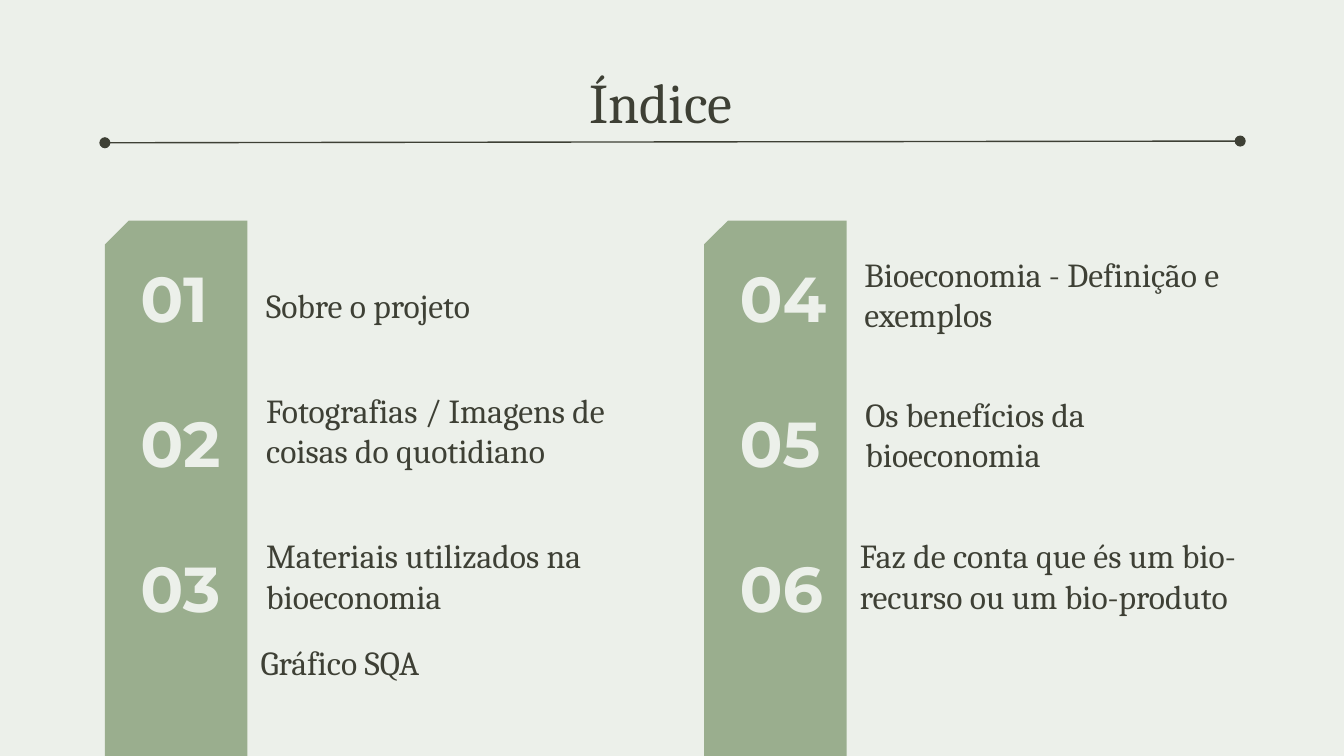
from lxml import etree
from pptx import Presentation
from pptx.dml.color import RGBColor
from pptx.enum.shapes import MSO_CONNECTOR, MSO_SHAPE
from pptx.enum.text import MSO_ANCHOR, PP_ALIGN
from pptx.oxml.ns import qn
from pptx.util import Pt

TOP, BOTTOM = MSO_ANCHOR.TOP, MSO_ANCHOR.BOTTOM
LEFT, CENTER = PP_ALIGN.LEFT, PP_ALIGN.CENTER

THEME = {
    "background": RGBColor.from_string("ECF0EA"),
    "ink": RGBColor.from_string("3E4035"),
    "bar": RGBColor.from_string("9AAE8E"),
    "title": {"name": "Cambria", "size": Pt(30), "bold": False},
    "entry": {"name": "Cambria", "size": Pt(18), "bold": False},
    "number": {"name": "Montserrat", "size": Pt(34), "bold": True},
}

# Content: each entry is (text, shift right, shift down, width) from its grid place.
TITLE = "Índice"
COLUMNS = [
    [
        ("Sobre o projeto", 0, 0, 216.7),
        ("Fotografias / Imagens de coisas do quotidiano", 0, 0, 216.7),
        ("Materiais utilizados na bioeconomia", 0, 0, 216.7),
    ],
    [
        ("Bioeconomia - Definição e exemplos", -0.5, 5, 216.7),
        ("Os benefícios da bioeconomia", 0, 2.2, 216.7),
        ("Faz de conta que és um bio-recurso ou um bio-produto", -2.9, 0, 252),
    ],
]
EXTRA_ENTRY = "Gráfico SQA"

# Layout in points
SLIDE_WIDTH, SLIDE_HEIGHT = 720, 405
BAR_LEFT, BAR_TOP, BAR_WIDTH, COLUMN_STEP = 56.2, 118.2, 76.4, 321
NUMBER_OFFSET, NUMBER_TOP, NUMBER_WIDTH, NUMBER_HEIGHT = 12, 134.8, 64.8, 51.8
ENTRY_OFFSET, ENTRY_TOP, ENTRY_HEIGHT = 79.3, 135.2, 46.1
ROW_STEP = 77.9
INSET = 7.2


def add_text(slide, text, box, style, color, anchor=BOTTOM, align=LEFT):
    frame = slide.shapes.add_textbox(*map(Pt, box)).text_frame
    settings = {"word_wrap": True, "vertical_anchor": anchor}
    for side in ("left", "top", "right", "bottom"):
        settings[f"margin_{side}"] = Pt(INSET)
    for key, value in settings.items():
        setattr(frame, key, value)
    paragraph = frame.paragraphs[0]
    paragraph.alignment = align
    run = paragraph.add_run()
    run.text = text
    for key, value in THEME[style].items():
        setattr(run.font, key, value)
    run.font.color.rgb = THEME[color]


def add_bar(slide, left):
    """Add a bar with its top left corner cut off, reaching the slide's foot."""
    box = (left, BAR_TOP, BAR_WIDTH, SLIDE_HEIGHT - BAR_TOP)
    bar = slide.shapes.add_shape(MSO_SHAPE.SNIP_1_RECTANGLE, *map(Pt, box))
    bar.adjustments[0] = 0.167
    bar.shadow.inherit = False
    bar.fill.solid()
    bar.fill.fore_color.rgb = THEME["bar"]
    bar.line.fill.background()
    bar._element.spPr.get_or_add_xfrm().set("flipH", "1")


def add_title_rule(slide):
    """Add the line under the title, with a dot at both ends."""
    ends = (56.2, 76.5, 664.4, 75.6)
    rule = slide.shapes.add_connector(MSO_CONNECTOR.STRAIGHT, *map(Pt, ends))
    rule.line.color.rgb = THEME["ink"]
    rule.line.width = Pt(0.75)
    outline = rule.line._get_or_add_ln()
    for end in ("a:headEnd", "a:tailEnd"):
        etree.SubElement(outline, qn(end), type="oval", w="med", len="med")
    etree.SubElement(rule._element.spPr, qn("a:effectLst"))


def main():
    deck = Presentation()
    deck.slide_width, deck.slide_height = Pt(SLIDE_WIDTH), Pt(SLIDE_HEIGHT)
    slide = deck.slides.add_slide(deck.slide_layouts[6])
    slide.background.fill.solid()
    slide.background.fill.fore_color.rgb = THEME["background"]

    add_text(slide, TITLE, (37.4, 28.8, 633.6, 72), "title", "ink", TOP, CENTER)
    number = 0
    for column, entries in enumerate(COLUMNS):
        bar_left = BAR_LEFT + column * COLUMN_STEP
        add_bar(slide, bar_left)
        for row, (entry, right, down, width) in enumerate(entries):
            number += 1
            row_shift = row * ROW_STEP
            entry_box = (bar_left + ENTRY_OFFSET + right,
                         ENTRY_TOP + row_shift + down, width, ENTRY_HEIGHT)
            number_box = (bar_left + NUMBER_OFFSET, NUMBER_TOP + row_shift,
                          NUMBER_WIDTH, NUMBER_HEIGHT)
            add_text(slide, entry, entry_box, "entry", "ink")
            add_text(slide, f"{number:02}", number_box, "number", "background")
    add_title_rule(slide)
    add_text(slide, EXTRA_ENTRY, (132.5, 326.9, 216.7, ENTRY_HEIGHT), "entry", "ink")
    deck.save("out.pptx")


if __name__ == "__main__":
    main()
